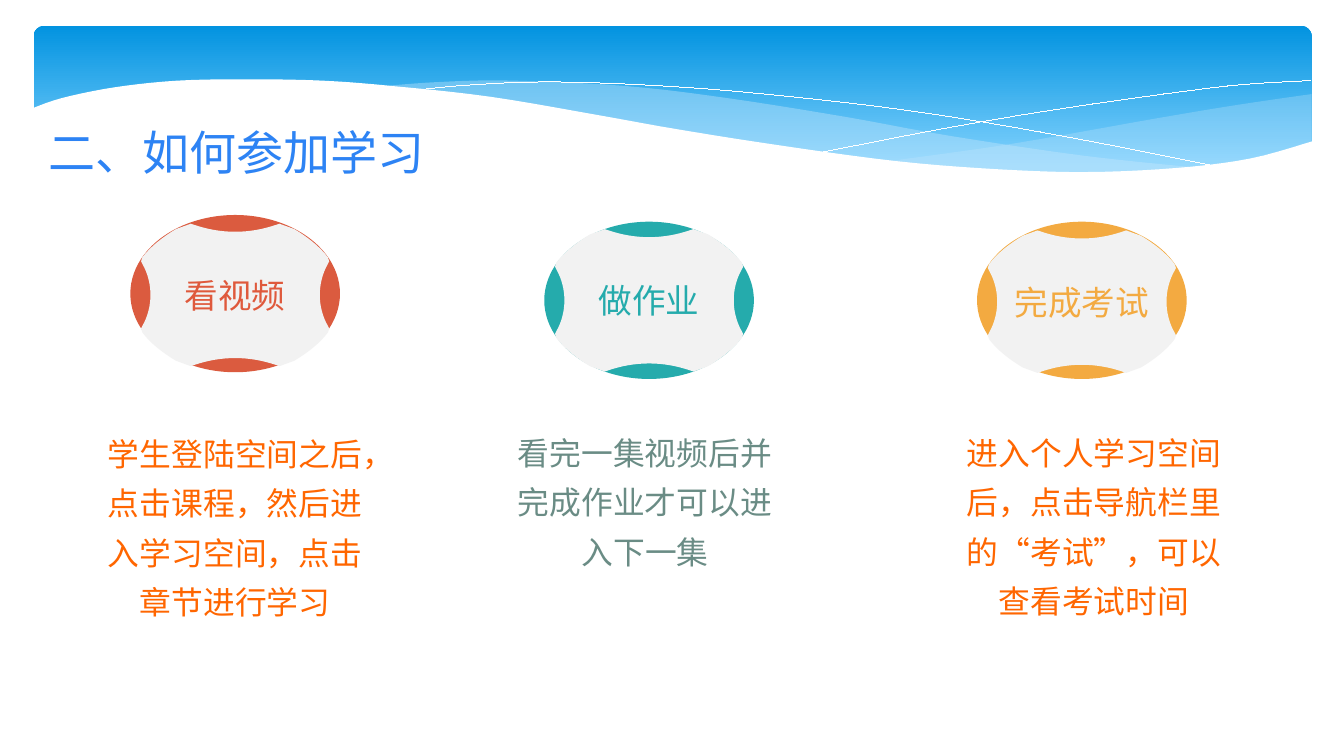
"""Builds the slide on how to take part in learning."""
from dataclasses import dataclass

from lxml import etree
from pptx import Presentation, util as u
from pptx.dml.color import RGBColor
from pptx.enum import shapes as sh, text as tx
from pptx.oxml import ns

INK = {
    "deep": "0293E0", "sky": "83D3FE", "mist": "C6E7FC", "white": "FFFFFF",
    "face": "F2F2F2", "title": "2D83F4", "orange": "FF6600", "sage": "6A8C85",
    "teal": "25ABAC", "gold": "F3AA41", "red": "DB5B3F", "word": "DF593C",
}
SANS = "Noto Sans CJK SC"
WIDE, HIGH = 1.56, 1.17
Point = tuple[float, float]


@dataclass
class Badge:
    """An oval with a notched face and a word."""
    x: float
    y: float
    word: str
    rim: str
    ink: str
    drop: float = 0


@dataclass
class Note:
    """A paragraph below a badge."""
    x: float
    y: float
    high: float
    body: str
    ink: str


@dataclass
class Wave:
    """A ribbon bounded by smooth edges."""
    edges: list[list[Point]]
    ink: str
    alpha: int = 100


BADGES = [
    Badge(4.05, 1.65, "做作业", "teal", "teal"),
    Badge(7.27, 1.65, "完成考试", "gold", "gold", 0.01),
    Badge(0.97, 1.6, "看视频", "red", "word", 0.01),
]
NOTES = [
    Note(0.6, 3.1, 1.42, "学生登陆空间之后，点击课程，然后进入学习空间，点击章节进行学习", "orange"),
    Note(3.65, 3.09, 1.38, "看完一集视频后并完成作业才可以进入下一集", "sage"),
    Note(6.99, 3.09, 1.72, "进入个人学习空间后，点击导航栏里的“考试”，可以查看考试时间", "orange"),
]
BACK = [
    Wave([[(9.76, 0.7), (9.21, 0.78), (8.61, 0.88), (7.53, 1.07), (6.61, 1.2)],
          [(6.61, 1.2), (7.32, 1.26), (8.03, 1.29), (8.63, 1.27), (9.21, 1.2), (9.76, 1.06)]],
         "mist", 29),
    Wave([[(8.93, 1.25), (8.07, 1.16), (7.06, 1.01), (6.29, 0.87), (5.41, 0.73),
           (4.65, 0.64), (3.8, 0.6), (3.28, 0.61), (2.86, 0.64)],
          [(2.86, 0.64), (3.62, 0.73), (4.49, 0.87), (5.66, 1.07), (6.5, 1.19),
           (7.22, 1.26), (8.07, 1.3), (8.57, 1.28), (8.93, 1.25)]], "mist", 40),
]
LINES = [
    [(3.09, 0.67), (3.53, 0.63), (4.16, 0.61), (5.1, 0.65), (6.08, 0.74),
     (6.95, 0.85), (7.95, 1.02), (9.07, 1.24)],
    [(6.13, 1.13), (6.95, 0.97), (7.76, 0.83), (8.66, 0.7), (9.24, 0.63), (9.75, 0.6)],
]
FRONT = Wave(
    [[(9.77, 1.05), (9.3, 1.18), (8.75, 1.25), (8.09, 1.28), (7.44, 1.26), (6.68, 1.2),
      (5.79, 1.08), (5.03, 0.96), (4.47, 0.86), (3.65, 0.72), (2.92, 0.64), (2.4, 0.6),
      (1.85, 0.59), (1.32, 0.6), (0.85, 0.65), (0.46, 0.73), (0.23, 0.81)],
     [(0.23, 1.68), (9.77, 1.68)]], "white")


def bend(a: Point, b: Point, c: Point, d: Point, n: int = 8) -> list[Point]:
    """Sample a cubic curve."""
    ks = [((1 - t) ** 3, 3 * t * (1 - t) ** 2, 3 * t * t * (1 - t), t ** 3)
          for t in (i / n for i in range(n + 1))]
    return [tuple(sum(k * p[i] for k, p in zip(ws, (a, b, c, d))) for i in (0, 1)) for ws in ks]


def smooth(dots: list[Point]) -> list[Point]:
    """Pass a smooth curve through the dots."""
    ends = [dots[0], *dots, dots[-1]]
    out = []
    for p, a, b, q in zip(ends, ends[1:], ends[2:], ends[3:]):
        near = tuple(a[i] + (b[i] - p[i]) / 6 for i in (0, 1))
        far = tuple(b[i] - (q[i] - a[i]) / 6 for i in (0, 1))
        out += bend(a, near, far, b, 5)
    return out


def paint(shape, ink: str | None, alpha: int = 100) -> None:
    """Give a shape a flat fill without line or shadow."""
    shape.shadow.inherit = False
    shape.line.fill.background()
    if ink is None:
        shape.fill.background()
        return
    shape.fill.solid()
    shape.fill.fore_color.rgb = RGBColor.from_string(INK[ink])
    if alpha < 100:
        tint = next(shape.element.iter(ns.qn("a:srgbClr")))
        etree.SubElement(tint, ns.qn("a:alpha"), val=str(alpha * 1000))


def trace(slide, dots: list[Point], ink: str | None, alpha: int = 100, close: bool = True):
    """Draw an outline through the dots."""
    pts = [(u.Inches(x), u.Inches(y)) for x, y in dots]
    pen = slide.shapes.build_freeform(*pts[0])
    pen.add_line_segments(pts[1:], close=close)
    shape = pen.convert_to_shape()
    paint(shape, ink, alpha)
    return shape


def write(shape, body: str, size: float, ink: str, face: str, side: tx.PP_ALIGN):
    """Put one formatted paragraph in a shape."""
    frame = shape.text_frame
    frame.word_wrap = True
    frame.text = body
    para = frame.paragraphs[0]
    para.alignment = side
    para.font.size = u.Pt(size)
    para.font.name = face
    para.font.color.rgb = RGBColor.from_string(INK[ink])
    base = next(shape.element.iter(ns.qn("a:defRPr")))
    etree.SubElement(base, ns.qn("a:ea"), typeface=SANS)
    return para


def draw_wave(slide, wave: Wave) -> None:
    """Draw one ribbon."""
    trace(slide, [p for edge in wave.edges for p in smooth(edge)], wave.ink, wave.alpha)


def draw_badge(slide, badge: Badge) -> None:
    """Draw one oval with its face."""
    oval = slide.shapes.add_shape(
        sh.MSO_SHAPE.OVAL, *map(u.Inches, (badge.x, badge.y, WIDE, HIGH)))
    paint(oval, badge.rim)
    arc = [*bend((0, 0.47), (0.11, 0.47), (0.21, 0.49), (0.3, 0.52)), (0.33, 0.53),
           *bend((0.44, 0.49), (0.54, 0.43), (0.63, 0.36), (0.69, 0.28)), (0.7, 0.25),
           *bend((0.69, 0.23), (0.65, 0.16), (0.63, 0.08), (0.63, 0))]
    half = arc + [(x, -y) for x, y in arc[::-1]]
    ring = half + [(-x, y) for x, y in half[::-1]]
    mid, row = badge.x + WIDE / 2, badge.y + HIGH / 2 + badge.drop
    face = trace(slide, [(mid + x, row + y) for x, y in ring], "face")
    frame = face.text_frame
    frame.margin_left = frame.margin_right = 0
    frame.vertical_anchor = tx.MSO_ANCHOR.MIDDLE
    write(face, badge.word, 18, badge.ink, SANS, tx.PP_ALIGN.CENTER)


def draw_note(slide, note: Note) -> None:
    """Draw one caption."""
    box = slide.shapes.add_textbox(*map(u.Inches, (note.x, note.y, 2.3, note.high)))
    para = write(box, note.body, 17, note.ink, SANS, tx.PP_ALIGN.CENTER)
    para.line_spacing = 1.3


def draw_banner(slide) -> None:
    """Draw the blue band and its waves."""
    band = slide.shapes.add_shape(
        sh.MSO_SHAPE.ROUNDED_RECTANGLE, *map(u.Inches, (0.25, 0.19, 9.51, 1.17)))
    band.adjustments[0] = 0.07
    paint(band, None)
    band.fill.gradient()
    band.fill.gradient_angle = 270
    for stop, ink, spot in zip(band.fill.gradient_stops, ("deep", "sky"), (0, 0.9)):
        stop.color.rgb = RGBColor.from_string(INK[ink])
        stop.position = spot
    for wave in BACK:
        draw_wave(slide, wave)
    for dots in LINES:
        line = trace(slide, smooth(dots), None, close=False).line
        line.color.rgb = RGBColor.from_string(INK["white"])
        line.width = u.Pt(0.01)
    trace(slide, smooth(FRONT.edges[0]) + FRONT.edges[1], FRONT.ink)


def draw_title(slide) -> None:
    """Fill the title placeholder and bring it forward."""
    head = slide.shapes.title
    head.left, head.top, head.width, head.height = map(u.Inches, (0.26, 0.85, 4.01, 0.55))
    head.text_frame.vertical_anchor = tx.MSO_ANCHOR.MIDDLE
    write(head, "二、如何参加学习", 25.2, "title", "Cabin", tx.PP_ALIGN.LEFT)
    head.element.getparent().append(head.element)


def main() -> None:
    """Build and save the deck."""
    deck = Presentation()
    deck.slide_width, deck.slide_height = u.Inches(10), u.Inches(10 * 9 / 16)
    slide = deck.slides.add_slide(deck.slide_layouts[5])
    draw_banner(slide)
    for badge in BADGES[:2]:
        draw_badge(slide, badge)
    draw_title(slide)
    for note in NOTES:
        draw_note(slide, note)
    draw_badge(slide, BADGES[2])
    deck.save("out.pptx")


if __name__ == "__main__":
    main()
